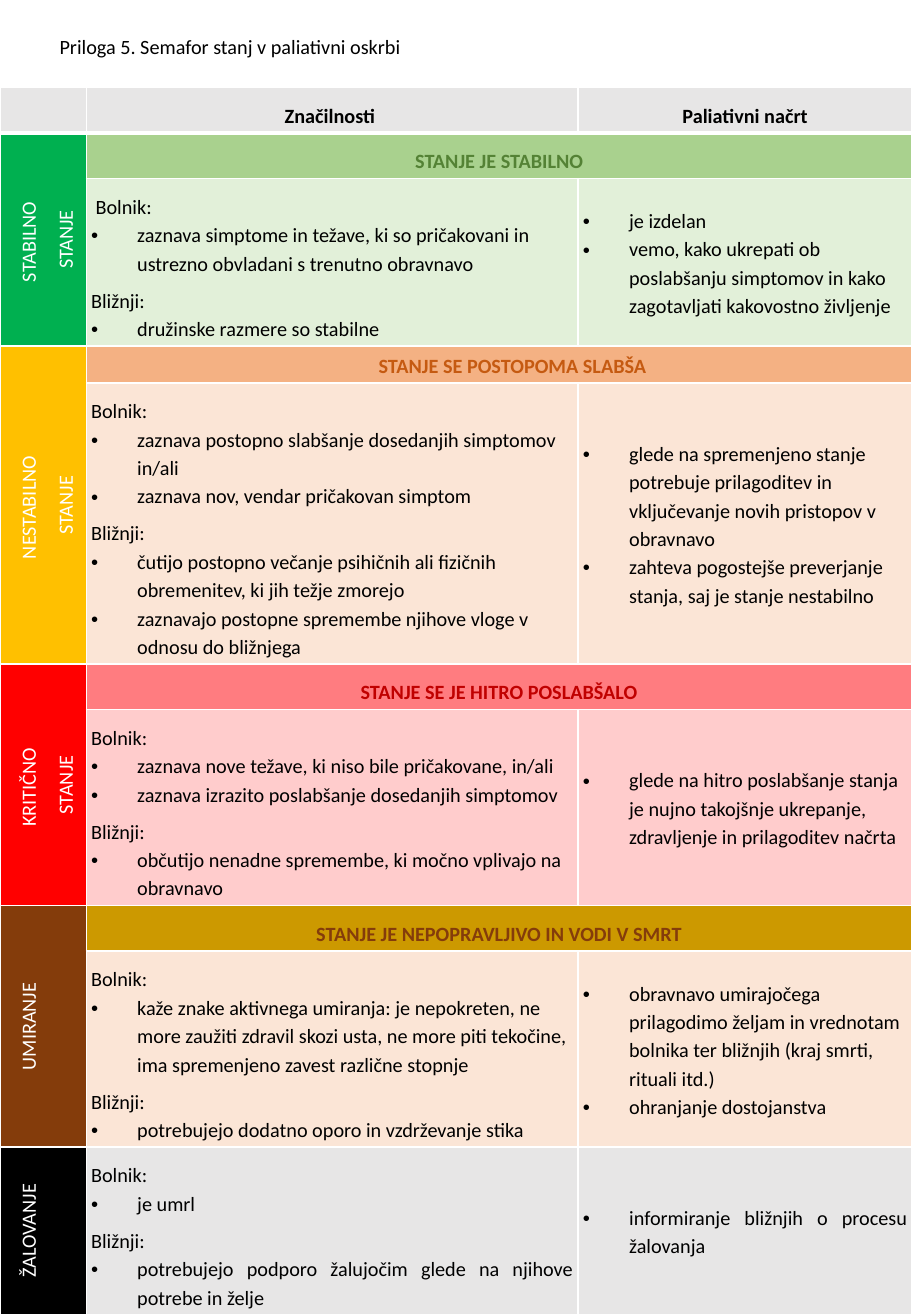
from lxml.etree import SubElement
from pptx import Presentation
from pptx.dml.color import RGBColor
from pptx.enum.text import MSO_ANCHOR, PP_ALIGN
from pptx.oxml import parse_xml
from pptx.oxml.ns import nsdecls, qn
from pptx.util import Inches, Pt

# Content
TITLE = "Priloga 5. Semafor stanj v paliativni oskrbi"
HEADERS = ("", "Značilnosti ", "Paliativni načrt")
PATIENT, RELATIVES = "Bolnik: ", "Bližnji: "
STATES = [
    dict(name="STABILNO \nSTANJE", heading="STANJE JE STABILNO", look="stable", rows=(0.23, 0.85),
         patient=["zaznava simptome in težave, ki so pričakovani in ustrezno obvladani s trenutno obravnavo"],
         relatives=["družinske razmere so stabilne"],
         plan=["je izdelan ",
               "vemo, kako ukrepati ob poslabšanju simptomov in kako zagotavljati kakovostno življenje"],
         patient_label=" Bolnik: "),
    dict(name="NESTABILNO \nSTANJE", heading="STANJE SE POSTOPOMA SLABŠA", look="unstable", rows=(0.2, 1.22),
         patient=["zaznava postopno slabšanje dosedanjih simptomov in/ali",
                  "zaznava nov, vendar pričakovan simptom "],
         relatives=["čutijo postopno večanje psihičnih ali fizičnih obremenitev, ki jih težje zmorejo",
                    "zaznavajo postopne spremembe njihove vloge v odnosu do bližnjega"],
         plan=["glede na spremenjeno stanje potrebuje prilagoditev in vključevanje novih pristopov v obravnavo",
               "zahteva pogostejše preverjanje stanja, saj je stanje nestabilno"],
         heading_style=dict(spacing=1.15, margin=0.22)),
    dict(name="KRITIČNO \nSTANJE", heading="STANJE SE JE HITRO POSLABŠALO", look="critical", rows=(0.23, 0.85),
         patient=["zaznava nove težave, ki niso bile pričakovane, in/ali",
                  "zaznava izrazito poslabšanje dosedanjih simptomov"],
         relatives=["občutijo nenadne spremembe, ki močno vplivajo na obravnavo"],
         plan=["glede na hitro poslabšanje stanja je nujno takojšnje ukrepanje, zdravljenje in prilagoditev načrta"]),
    dict(name="UMIRANJE", heading="STANJE JE NEPOPRAVLJIVO IN VODI V SMRT", look="dying", rows=(0.23, 0.95),
         patient=["kaže znake aktivnega umiranja: je nepokreten, ne more zaužiti zdravil skozi usta, "
                  "ne more piti tekočine, ima spremenjeno zavest različne stopnje"],
         relatives=["potrebujejo dodatno oporo in vzdrževanje stika"],
         plan=["obravnavo umirajočega prilagodimo željam in vrednotam bolnika ter bližnjih "
               "(kraj smrti, rituali itd.)",
               "ohranjanje dostojanstva"]),
    dict(name="ŽALOVANJE", heading=None, look="grief", rows=(0.81,),
         patient=["je umrl"],
         relatives=["potrebujejo podporo žalujočim glede na njihove potrebe in želje"],
         plan=["informiranje bližnjih o procesu žalovanja"], align=PP_ALIGN.JUSTIFY),
]

# Theme: each state has (side, heading fill, heading text, body fill)
THEME = dict(
    font="Calibri", size=12, text="000000", light="FFFFFF", header="E7E6E6",
    stable=("00B050", "A9D18E", "548235", "E2F0D9"),
    unstable=("FFC000", "F4B183", "C55A11", "FBE5D6"),
    critical=("FF0000", "FF7C80", "C00000", "FFCCCC"),
    dying=("843C0B", "CC9900", "843C0B", "FBE5D6"),
    grief=("000000", None, None, "E7E6E6"),
)

# Grid in inches, vertical cell inset in points
PAGE_WIDTH, PAGE_HEIGHT = 7.5, 10.83
COLUMNS = (0.71, 4.05, 2.75)
HEADER_HEIGHT = 0.27
TABLE_TOP, TABLE_HEIGHT = 0.72, 9.77
SIDE_INSET, BULLET_INDENT = 0.04, 0.38
VERTICAL_INSET_POINTS = 2.5


def format_runs(para, color, bold=False):
    for span in para.runs:
        span.font.name, span.font.size = THEME["font"], Pt(THEME["size"])
        span.font.bold = bold
        span.font.color.rgb = RGBColor.from_string(color)


def format_para(para, align, spacing=1.5, margin=0, bullet=False):
    para.alignment, para.line_spacing = align, spacing
    settings = para._p.get_or_add_pPr()
    if bullet:
        margin = BULLET_INDENT
        settings.set("indent", str(-Inches(margin)))
        SubElement(settings, qn("a:buFont")).set("typeface", "Arial")
        SubElement(settings, qn("a:buChar")).set("char", "•")
    settings.set("marL", str(Inches(margin)))


def paint(cell, fill):
    cell.fill.solid()
    cell.fill.fore_color.rgb = RGBColor.from_string(fill)
    cell.vertical_anchor = MSO_ANCHOR.MIDDLE
    cell.margin_left = cell.margin_right = Inches(SIDE_INSET)
    cell.margin_top = cell.margin_bottom = Pt(VERTICAL_INSET_POINTS)


def add_borders(cell, bottom):
    settings = cell._tc.get_or_add_tcPr()
    for position, (side, points) in enumerate((("L", 1), ("R", 1), ("T", 1), ("B", bottom))):
        settings.insert(position, parse_xml(
            f'<a:ln{side} {nsdecls("a")} w="{Pt(points)}"><a:solidFill>'
            f'<a:srgbClr val="{THEME["light"]}"/></a:solidFill></a:ln{side}>'))


def fill_label(cell, text, fill, color, bold=True, **style):
    paint(cell, fill)
    cell.text_frame.text = text
    for para in cell.text_frame.paragraphs:
        format_para(para, PP_ALIGN.CENTER, **style)
        format_runs(para, color, bold)


def fill_list(cell, lines, labels, fill, align):
    paint(cell, fill)
    cell.text_frame.text = "\n".join(lines)
    for para in cell.text_frame.paragraphs:
        if para.text in labels:
            format_para(para, PP_ALIGN.JUSTIFY)
        else:
            format_para(para, align, spacing=1.15, bullet=True)
        format_runs(para, THEME["text"])


def add_title(page):
    title = page.shapes.title
    title.left, title.top = Inches(0.39), Inches(0.23)
    title.width, title.height = Inches(3.04), Inches(0.3)
    frame = title.text_frame
    frame.text, frame.word_wrap = TITLE, False
    frame.vertical_anchor = MSO_ANCHOR.TOP
    frame.paragraphs[0].alignment = PP_ALIGN.LEFT
    format_runs(frame.paragraphs[0], THEME["text"])


def add_state(table, row, state):
    side, band, band_text, body = THEME[state["look"]]
    last = row + len(state["rows"]) - 1

    # Side label and heading band
    label = table.cell(row, 0)
    if state["heading"]:
        label.merge(table.cell(last, 0))
        heading = table.cell(row, 1)
        heading.merge(table.cell(row, 2))
        fill_label(heading, state["heading"], band, band_text, **state.get("heading_style", {}))
    fill_label(label, state["name"], side, THEME["light"], bold=False)
    label._tc.get_or_add_tcPr().set("vert", "vert270")

    # Characteristics and plan
    align = state.get("align", PP_ALIGN.LEFT)
    labels = (state.get("patient_label", PATIENT), RELATIVES)
    lines = [labels[0], *state["patient"], labels[1], *state["relatives"]]
    fill_list(table.cell(last, 1), lines, labels, body, align)
    fill_list(table.cell(last, 2), state["plan"], (), body, align)
    return last + 1


def add_state_table(page):
    heights = [HEADER_HEIGHT] + [height for state in STATES for height in state["rows"]]
    box = page.shapes.add_table(len(heights), len(COLUMNS), 0, Inches(TABLE_TOP),
                                Inches(PAGE_WIDTH), Inches(TABLE_HEIGHT))
    table = box.table
    table.first_row = table.horz_banding = False
    for column, width in zip(table.columns, COLUMNS):
        column.width = Inches(width)
    for row, height in zip(table.rows, heights):
        row.height = Inches(height)
    box.width, box.height = Inches(PAGE_WIDTH), Inches(TABLE_HEIGHT)

    for column, text in enumerate(HEADERS):
        fill_label(table.cell(0, column), text, THEME["header"], THEME["text"])
    row = 1
    for state in STATES:
        row = add_state(table, row, state)
    for index in range(len(heights)):
        for column in range(len(COLUMNS)):
            add_borders(table.cell(index, column), bottom=1 if index else 3)


def main():
    deck = Presentation()
    deck.slide_width, deck.slide_height = Inches(PAGE_WIDTH), Inches(PAGE_HEIGHT)
    page = deck.slides.add_slide(deck.slide_layouts[5])
    add_state_table(page)
    add_title(page)
    deck.save("out.pptx")


if __name__ == "__main__":
    main()
